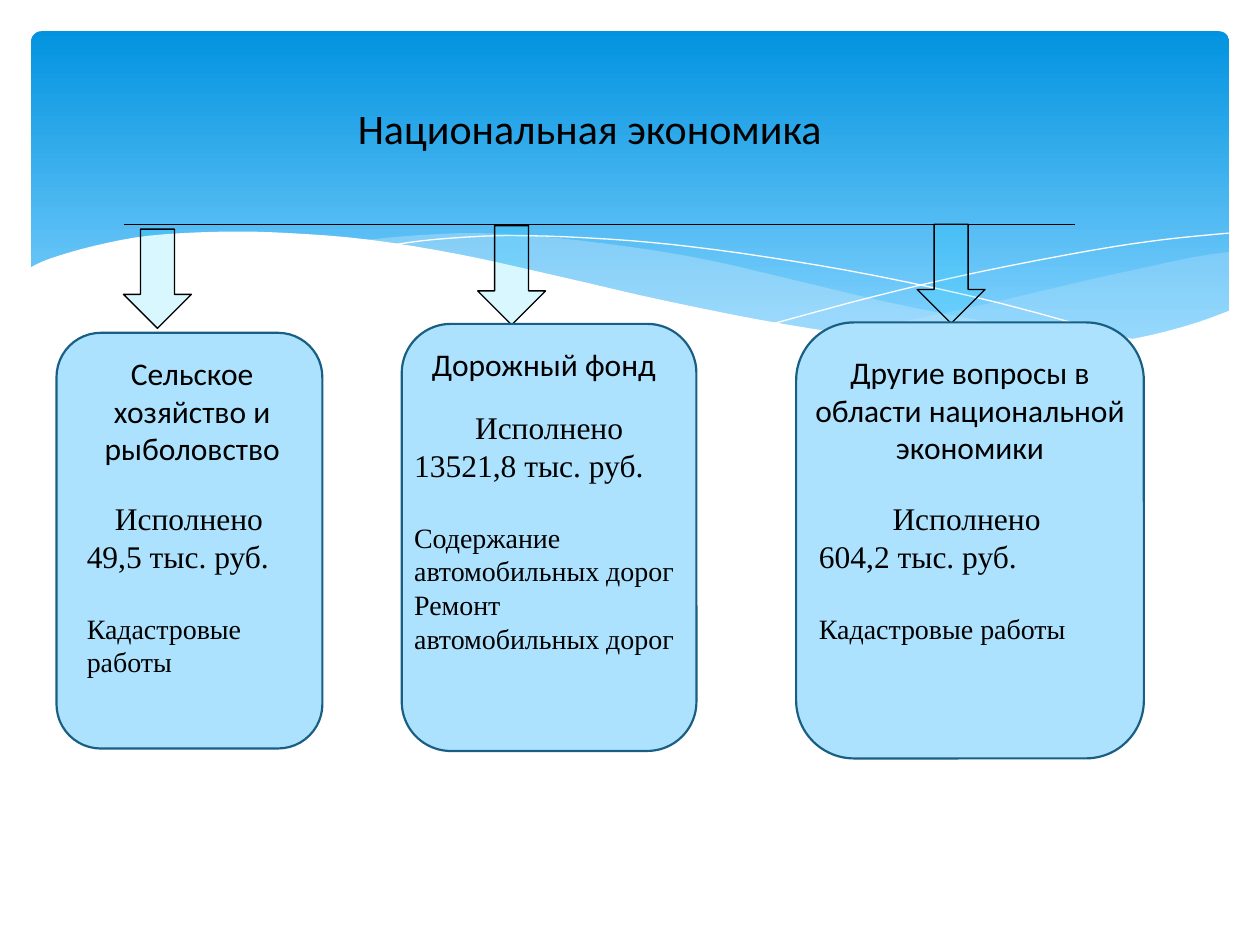
"""Build the slide on national economy spending with three budget cards."""
from dataclasses import dataclass

from lxml.etree import SubElement
from pptx import Presentation
from pptx.dml.color import RGBColor
from pptx.enum.shapes import MSO_CONNECTOR, MSO_SHAPE
from pptx.enum.text import MSO_ANCHOR, MSO_AUTO_SIZE, PP_ALIGN
from pptx.oxml.ns import qn
from pptx.util import Cm, Pt

Point = tuple[float, float]
Box = tuple[float, float, float, float]

BLACK, WHITE, WAVE = "000000", "FFFFFF", "C6E7FC"
CARD_FILL, CARD_LINE, ARROW_FILL = "ADE2FE", "195F84", "00CCFF"
HEADING_FONT, BODY_FONT = "Calibri", "Times New Roman"


@dataclass
class Card:
    box: Box
    arrow: Point
    heading_box: Box
    heading: list[str]
    body_box: Box
    amount: str
    works: list[str]


@dataclass
class Wave:
    edges: list[list[Point]]
    fill: str | None = None
    opacity: int = 100


CARDS = [
    Card((1.14, 6.71, 5.36, 8.38), (2.49, 4.62), (1.22, 7.01, 5.31, 2.57),
         ["Сельское хозяйство и рыболовство"], (1.5, 9.93, 4.62, 3.94),
         "49,5 тыс. руб.", ["Кадастровые работы"]),
    Card((8.1, 6.53, 5.94, 8.61), (9.63, 4.55), (8.31, 6.83, 5.31, 1.02),
         ["Дорожный фонд"], (8.1, 8.1, 5.94, 5.31),
         "13521,8 тыс. руб.",
         ["Содержание автомобильных дорог", "Ремонт автомобильных дорог"]),
    Card((16.05, 6.5, 7.01, 8.79), (18.49, 4.52), (16.05, 6.99, 7.01, 2.57),
         ["Другие вопросы в", "области национальной экономики"],
         (16.26, 9.93, 6.45, 3.25),
         "604,2 тыс. руб.", ["Кадастровые работы"]),
]

WAVES = [
    Wave([[(24.78, 5.08), (24.08, 5.18), (23.01, 5.41), (21.87, 5.66),
           (19.79, 6.15), (17.93, 6.53), (16.79, 6.73)],
          [(16.79, 6.73), (17.91, 6.88), (18.92, 6.98), (20.4, 7.06),
           (21.69, 7.01), (22.78, 6.86), (23.75, 6.65), (24.78, 6.27)]], WAVE, 29),
    Wave([[(7.26, 4.85), (8.33, 4.75), (9.65, 4.7), (11.23, 4.8), (13.06, 5.03),
           (14.45, 5.28), (15.98, 5.64), (17.93, 6.1), (19.69, 6.45),
           (21.26, 6.73), (22.68, 6.93)],
          [(22.68, 6.93), (21.54, 7.04), (20.22, 7.06), (18.69, 6.98),
           (16.89, 6.76), (14.83, 6.4), (12.47, 5.89), (10.85, 5.49),
           (9.19, 5.16), (7.26, 4.85)]], WAVE, 40),
    Wave([[(7.85, 4.95), (8.74, 4.83), (10.19, 4.75), (11.91, 4.8), (13.54, 4.93),
           (15.44, 5.18), (17.65, 5.56), (20.19, 6.12), (23.04, 6.91)]]),
    Wave([[(15.57, 6.53), (17.65, 5.97), (19.71, 5.49), (22, 5.05),
           (23.47, 4.83), (24.77, 4.7)]]),
    Wave([[(24.82, 6.25), (23.88, 6.58), (22.53, 6.88), (20.55, 7.04),
           (18.44, 6.91), (15.9, 6.55), (13.44, 6.07), (11.35, 5.59),
           (9.27, 5.13), (7.42, 4.83), (5.84, 4.7), (4.5, 4.67),
           (3.02, 4.75), (1.93, 4.95), (1.02, 5.21), (0.58, 5.41)],
          [(0.58, 8.36), (24.82, 8.36)]], WHITE),
]


def color(value: str) -> RGBColor:
    return RGBColor.from_string(value)


def lengths(values: Box | Point) -> list[Cm]:
    return [Cm(value) for value in values]


def paint(shape, fill: str | None, line: str | None, width: float = 0.75,
          opacity: int = 100) -> None:
    shape.shadow.inherit = False
    if fill:
        shape.fill.solid()
        shape.fill.fore_color.rgb = color(fill)
        if opacity < 100:
            fill_color = shape.fill._xPr.find(qn("a:solidFill"))[0]
            SubElement(fill_color, qn("a:alpha")).set("val", str(opacity * 1000))
    else:
        shape.fill.background()
    if line:
        shape.line.color.rgb = color(line)
        shape.line.width = Pt(width)
    else:
        shape.line.fill.background()


def smooth(points: list[Point], steps: int = 4) -> list[Point]:
    """Interpolate a Catmull-Rom curve through the points."""
    if len(points) < 3:
        return points
    padded = [points[0], *points, points[-1]]
    curve = [points[0]]
    for a, b, c, d in zip(padded, padded[1:], padded[2:], padded[3:]):
        for step in range(1, steps + 1):
            t = step / steps
            curve.append(tuple(
                q + t / 2 * (r - p + t * (2 * p - 5 * q + 4 * r - s
                                          + t * (3 * q - p - 3 * r + s)))
                for p, q, r, s in zip(a, b, c, d)))
    return curve


def draw_wave(slide, wave: Wave) -> None:
    points = [lengths(point) for edge in wave.edges for point in smooth(edge)]
    builder = slide.shapes.build_freeform(*points[0])
    builder.add_line_segments(points[1:], close=bool(wave.fill))
    shape = builder.convert_to_shape()
    paint(shape, wave.fill, None if wave.fill else WHITE, 0, wave.opacity)


def draw_backdrop(slide) -> None:
    band = slide.shapes.add_shape(
        MSO_SHAPE.ROUNDED_RECTANGLE, *lengths((0.63, 0.63, 24.15, 6.86)))
    band.adjustments[0] = 0.03
    paint(band, None, None)
    band.fill.gradient()
    band.fill.gradient_angle = 270
    for stop, value, position in zip(
            band.fill.gradient_stops, ("0293E0", "83D3FE"), (0, 0.9)):
        stop.color.rgb = color(value)
        stop.position = position
    for wave in WAVES:
        draw_wave(slide, wave)


def format_paragraph(paragraph, font: str, size: float,
                     alignment: PP_ALIGN = PP_ALIGN.CENTER) -> None:
    paragraph.alignment = alignment
    for run in paragraph.runs:
        run.font.name = font
        run.font.size = Pt(size)
        run.font.color.rgb = color(BLACK)


def add_text(slide, box: Box, lines: list[str]):
    text_frame = slide.shapes.add_textbox(*lengths(box)).text_frame
    text_frame.word_wrap = True
    text_frame.text = "\n".join(lines)
    return text_frame.paragraphs


def draw_title(slide, text: str) -> None:
    title = slide.shapes.title
    slide.shapes._spTree.append(title._element)
    title.left, title.top, title.width, title.height = lengths((2.49, 1.93, 18.8, 1.27))
    title.text_frame.text = text
    title.text_frame.auto_size = MSO_AUTO_SIZE.NONE
    title.text_frame.vertical_anchor = MSO_ANCHOR.TOP
    format_paragraph(title.text_frame.paragraphs[0], HEADING_FONT, 24)


def draw_branch_line(slide) -> None:
    line = slide.shapes.add_connector(
        MSO_CONNECTOR.STRAIGHT, *lengths((2.49, 4.52, 21.67, 4.52)))
    line.line.color.rgb = color(BLACK)
    line.line.width = Pt(0.75)
    SubElement(line._element.spPr, qn("a:effectLst"))


def draw_card(slide, card: Card) -> None:
    arrow = slide.shapes.add_shape(
        MSO_SHAPE.DOWN_ARROW, *lengths((*card.arrow, 1.37, 2)))
    paint(arrow, ARROW_FILL, BLACK, opacity=15)
    panel = slide.shapes.add_shape(MSO_SHAPE.ROUNDED_RECTANGLE, *lengths(card.box))
    paint(panel, CARD_FILL, CARD_LINE, 1.25)
    for paragraph in add_text(slide, card.heading_box, card.heading):
        format_paragraph(paragraph, HEADING_FONT, 18)
    status, amount, *works = add_text(
        slide, card.body_box, ["Исполнено", card.amount, *card.works])
    format_paragraph(status, BODY_FONT, 18)
    format_paragraph(amount, BODY_FONT, 18, PP_ALIGN.LEFT)
    for work in works:
        format_paragraph(work, BODY_FONT, 16, PP_ALIGN.LEFT)
    works[0].space_before = Pt(21)


def main() -> None:
    presentation = Presentation()
    presentation.slide_width, presentation.slide_height = lengths((25.4, 19.05))
    slide = presentation.slides.add_slide(presentation.slide_layouts[5])
    draw_backdrop(slide)
    draw_title(slide, "Национальная экономика")
    draw_branch_line(slide)
    for card in CARDS:
        draw_card(slide, card)
    presentation.save("out.pptx")


if __name__ == "__main__":
    main()
